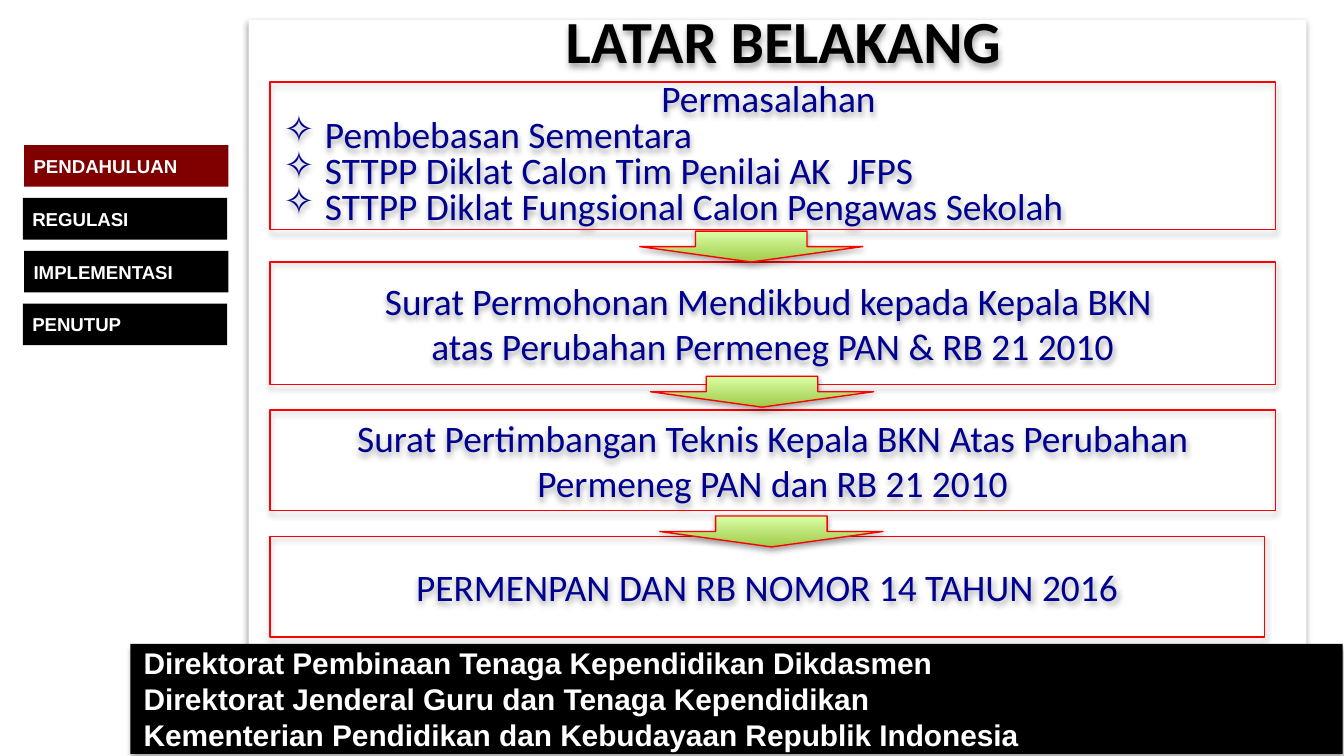
"""Build the background slide: a side menu, a chain of boxes and arrows, and a footer."""
from lxml.etree import SubElement
from pptx import Presentation
from pptx.dml.color import RGBColor
from pptx.enum.shapes import MSO_SHAPE as Shape
from pptx.enum.text import MSO_ANCHOR as Anchor, PP_ALIGN as Align
from pptx.oxml.ns import qn
from pptx.util import Emu, Inches, Pt

WHITE = RGBColor(0xFF, 0xFF, 0xFF)
BLACK = RGBColor(0x00, 0x00, 0x00)
NAVY = RGBColor(0x00, 0x00, 0x90)
RED = RGBColor(0xFF, 0x00, 0x00)
MAROON = RGBColor(0x80, 0x00, 0x00)
GREEN = RGBColor(0xA0, 0xCA, 0x4A)
LIME = RGBColor(0xDA, 0xFF, 0xA5)

TITLE = "LATAR BELAKANG"
MENU = ["PENDAHULUAN", "REGULASI", "IMPLEMENTASI", "PENUTUP"]
PROBLEMS = [
    "Permasalahan ",
    "Pembebasan Sementara",
    "STTPP Diklat Calon Tim Penilai AK  JFPS",
    "STTPP Diklat Fungsional Calon Pengawas Sekolah",
]
STEPS = [
    (1.95, 7.48, 0.91, ["Surat Permohonan Mendikbud kepada Kepala BKN ",
                        "atas Perubahan Permeneg PAN & RB 21 2010"]),
    (3.05, 7.48, 0.75, ["Surat Pertimbangan Teknis Kepala BKN Atas Perubahan "
                        "Permeneg PAN dan RB 21 2010"]),
    (3.99, 7.4, 0.75, ["PERMENPAN DAN RB NOMOR 14 TAHUN 2016"]),
]
ARROWS = [(4.76, 1.72), (4.84, 2.8), (4.91, 3.84)]
FOOTER = [
    "Direktorat Pembinaan Tenaga Kependidikan Dikdasmen",
    "Direktorat Jenderal Guru dan Tenaga Kependidikan",
    "Kementerian Pendidikan dan Kebudayaan Republik Indonesia",
]
COLUMN_LEFT = 2.01
MENU_TOP, MENU_STEP = 1.08, 0.393


def add_shadow(shape, opacity=35):
    """Give the shape a soft shadow straight below it."""
    shape.shadow.inherit = False
    effects = shape._element.spPr.find(qn("a:effectLst"))
    shadow = SubElement(effects, qn("a:outerShdw"), blurRad=str(Pt(3.1)),
                        dist=str(Pt(1.7)), dir="5400000", rotWithShape="0")
    colour = SubElement(shadow, qn("a:srgbClr"), val="000000")
    SubElement(colour, qn("a:alpha"), val=str(opacity * 1000))


def add_box(slide, left, top, width, height, kind=Shape.RECTANGLE,
            fill=None, line=None, opacity=0):
    """Add a shape with an optional fill, line and shadow."""
    shape = slide.shapes.add_shape(kind, *map(Inches, (left, top, width, height)))
    shape.shadow.inherit = False
    if fill is None:
        shape.fill.background()
    else:
        shape.fill.solid()
        shape.fill.fore_color.rgb = fill
    if line is None:
        shape.line.fill.background()
    else:
        shape.line.color.rgb = line
        shape.line.width = Pt(0.75)
    if opacity:
        add_shadow(shape, opacity)
    return shape


def write(shape, lines, size=20, font="Calibri", colour=NAVY, bold=False,
          align=Align.CENTER, spacing=None, bullets_from=None, insets=(0.1, 0.05)):
    """Write one paragraph per line, with bullets from the given line on."""
    frame = shape.text_frame
    frame.word_wrap = True
    frame.vertical_anchor = Anchor.MIDDLE
    frame.margin_left = frame.margin_right = Inches(insets[0])
    frame.margin_top = frame.margin_bottom = Inches(insets[1])
    frame.text = "\n".join(lines)
    for index, paragraph in enumerate(frame.paragraphs):
        paragraph.alignment = align
        paragraph.line_spacing = spacing
        if bullets_from is not None and index >= bullets_from:
            paragraph.alignment = Align.LEFT
            properties = paragraph._p.get_or_add_pPr()
            properties.set("marL", str(Inches(0.31)))
            properties.set("indent", str(-Inches(0.31)))
            SubElement(properties, qn("a:buChar"), char="✧")
        for run in paragraph.runs:
            run.font.size = Pt(size)
            run.font.name = font
            run.font.bold = bold
            run.font.color.rgb = colour


def add_arrow(slide, left, top):
    """Add a green gradient arrow pointing down."""
    arrow = add_box(slide, left, top, 1.66, 0.23, Shape.DOWN_ARROW, line=RED, opacity=35)
    arrow.fill.gradient()
    arrow.fill.gradient_angle = 90
    for stop, colour in zip(arrow.fill.gradient_stops, (GREEN, LIME)):
        stop.color.rgb = colour


def place_title(slide):
    """Move the title placeholder to the head of the panel and format it."""
    title = slide.shapes.title
    title.left, title.top, title.width, title.height = map(
        Inches, (COLUMN_LEFT, 0.06, 7.64, 0.47))
    write(title, [TITLE], size=32, colour=BLACK, bold=True)
    add_shadow(title)
    slide.shapes._spTree.append(title._element)


def main():
    """Build and save the slide."""
    presentation = Presentation()
    presentation.slide_width, presentation.slide_height = Inches(10), Emu(5143500)
    slide = presentation.slides.add_slide(presentation.slide_layouts[5])

    add_box(slide, 1.85, 0.15, 7.87, 5.32, fill=WHITE, opacity=38)
    footer = add_box(slide, 0.97, 4.79, 9.02, 0.82, fill=BLACK, opacity=35)
    write(footer, FOOTER, size=16, font="Arial", colour=WHITE, bold=True, align=Align.LEFT)
    place_title(slide)

    problems = add_box(slide, COLUMN_LEFT, 0.61, 7.48, 1.1, line=RED, opacity=35)
    write(problems, PROBLEMS, spacing=0.8, bullets_from=1)

    for index, label in enumerate(MENU):
        item = add_box(slide, 0.18 - 0.01 * (index % 2), MENU_TOP + index * MENU_STEP,
                       1.52, 0.31, fill=BLACK if index else MAROON)
        write(item, [label], size=10, font="Arial", colour=WHITE, bold=True,
              align=Align.LEFT, insets=(0.07, 0.04))

    for top, width, height, lines in STEPS:
        step = add_box(slide, COLUMN_LEFT, top, width, height, line=RED, opacity=35)
        write(step, lines)
    for left, top in ARROWS:
        add_arrow(slide, left, top)

    presentation.save("out.pptx")


if __name__ == "__main__":
    main()
